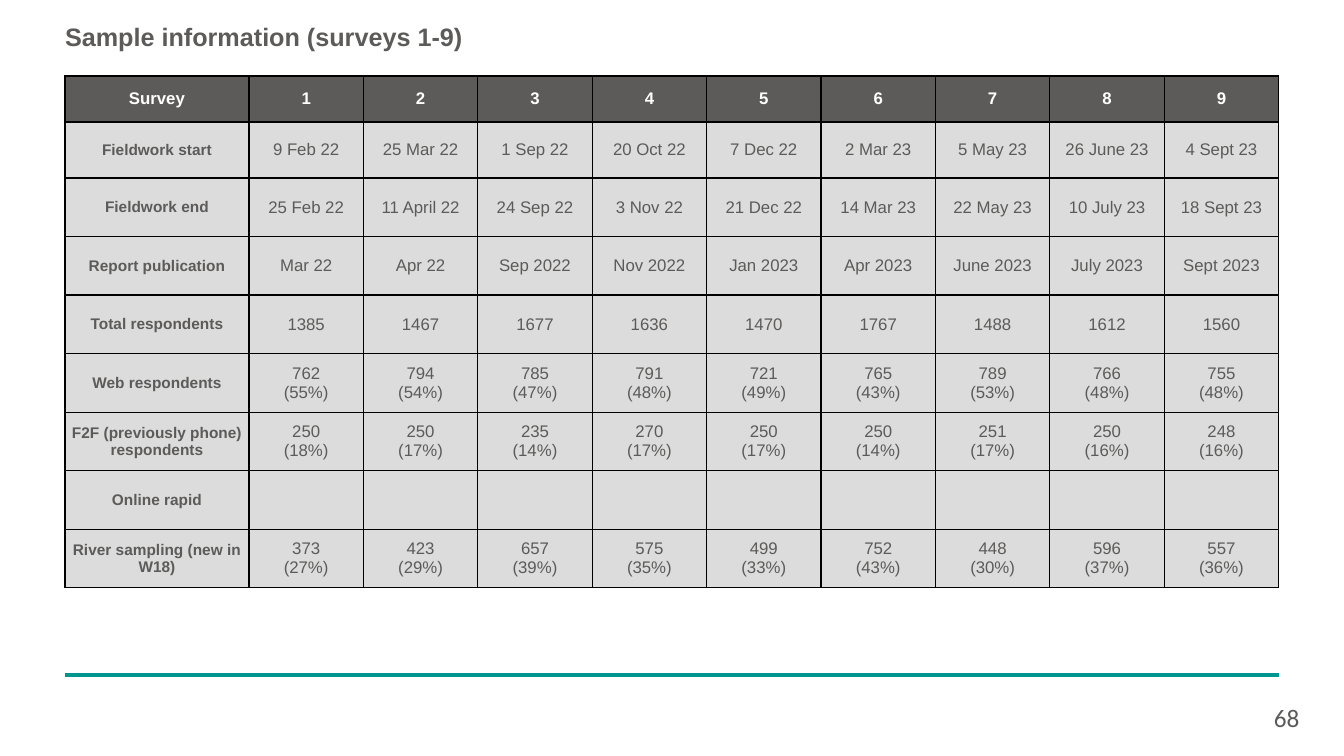
from lxml import etree
from pptx import Presentation, util as u
from pptx.dml.color import RGBColor
from pptx.enum import shapes, text
from pptx.oxml.ns import qn

SCALE = 914400 / 100.8
GREY, WHITE, BLACK, TEAL = "5C5B5A", "FFFFFF", "000000", "009690"
TITLE = dict(name="Arial", size=u.Pt(18), bold=True)
HEADER = dict(name="Arial", size=u.Pt(12), bold=True)
LABEL = dict(name="Arial", size=u.Pt(11), bold=True)
VALUE = dict(name="Arial", size=u.Pt(12), bold=False)
PAGE = dict(name="Calibri", size=u.Pt(18), bold=False)

ROWS = [
    ["Survey"] + [str(n) for n in range(1, 10)],
    ["Fieldwork start", "9 Feb 22", "25 Mar 22", "1 Sep 22", "20 Oct 22", "7 Dec 22",
     "2 Mar 23", "5 May 23", "26 June 23", "4 Sept 23"],
    ["Fieldwork end", "25 Feb 22", "11 April 22", "24 Sep 22", "3 Nov 22", "21 Dec 22",
     "14 Mar 23", "22 May 23", "10 July 23", "18 Sept 23"],
    ["Report publication", "Mar 22", "Apr 22", "Sep 2022", "Nov 2022", "Jan 2023",
     "Apr 2023", "June 2023", "July 2023", "Sept 2023"],
    ["Total respondents", "1385", "1467", "1677", "1636", "1470", "1767", "1488", "1612", "1560"],
    ["Web respondents", "762\n(55%)", "794\n(54%)", "785\n(47%)", "791\n(48%)", "721\n(49%)",
     "765\n(43%)", "789\n(53%)", "766\n(48%)", "755\n(48%)"],
    ["F2F (previously phone) respondents", "250\n(18%)", "250\n(17%)", "235\n(14%)", "270\n(17%)",
     "250\n(17%)", "250\n(14%)", "251\n(17%)", "250\n(16%)", "248\n(16%)"],
    ["Online rapid"] + [""] * 9,
    ["River sampling (new in W18)", "373\n(27%)", "423\n(29%)", "657\n(39%)", "575\n(35%)",
     "499\n(33%)", "752\n(43%)", "448\n(30%)", "596\n(37%)", "557\n(36%)"],
]


def px(n):
    return u.Emu(round(n * SCALE))


def color(hex_string):
    return RGBColor.from_string(hex_string)


def set_attrs(obj, values):
    for name, value in values.items():
        setattr(obj, name, value)


def write(tf, content, font, fill, align):
    for i, line in enumerate(content.split("\n")):
        p = tf.paragraphs[0] if i == 0 else tf.add_paragraph()
        p.alignment = align
        if line:
            r = p.add_run()
            r.text = line
            set_attrs(r.font, font)
            r.font.color.rgb = color(fill)


def add_label(s, box, content, font, **frame):
    tf = s.shapes.add_textbox(*map(px, box)).text_frame
    set_attrs(tf, dict(word_wrap=True, **frame))
    write(tf, content, font, GREY, text.PP_ALIGN.LEFT)
    return tf


def add_title(s, box):
    tf = add_label(s, box, "Sample information (surveys 1-9)", TITLE,
                   margin_left=0, margin_top=0, margin_right=0, margin_bottom=0)
    tf.paragraphs[0].line_spacing = 0.9


def add_borders(cell):
    # Borders must come before the fill in the cell properties
    tcPr = cell._tc.get_or_add_tcPr()
    for i, side in enumerate(("lnL", "lnR", "lnT", "lnB")):
        ln = etree.Element(qn("a:" + side), w=str(u.Pt(1)))
        solid = etree.SubElement(ln, qn("a:solidFill"))
        etree.SubElement(solid, qn("a:srgbClr"), val=BLACK)
        tcPr.insert(i, ln)


def format_cell(cell, content, is_header, is_label):
    font = HEADER if is_header else LABEL if is_label else VALUE
    set_attrs(cell, dict(margin_left=px(4), margin_right=px(4), margin_top=px(1),
                         margin_bottom=px(1), vertical_anchor=text.MSO_ANCHOR.MIDDLE))
    write(cell.text_frame, content, font, WHITE if is_header else GREY, text.PP_ALIGN.CENTER)
    cell.fill.solid()
    cell.fill.fore_color.rgb = color(GREY)
    if not is_header:
        clr = cell._tc.tcPr.find(".//" + qn("a:srgbClr"))
        etree.SubElement(clr, qn("a:alpha"), val="21000")
    add_borders(cell)


def add_sample_table(s, box, label_w=184, header_h=46, first_h=56):
    w, h = box[2:]
    table = s.shapes.add_table(len(ROWS), len(ROWS[0]), *map(px, box)).table
    set_attrs(table, dict(first_row=False, horz_banding=False))
    survey_w = (w - label_w) / (len(ROWS[0]) - 1)
    row_h = (h - header_h - first_h) / (len(ROWS) - 2)
    for i, column in enumerate(table.columns):
        column.width = px(survey_w if i else label_w)
    for i, row in enumerate(table.rows):
        row.height = px((header_h, first_h)[i] if i < 2 else row_h)
        for j, content in enumerate(ROWS[i]):
            format_cell(table.cell(i, j), content, i == 0, j == 0)


def add_footer(s, box):
    x, y, w, h = box
    # Rule across the content width
    rule = s.shapes.add_connector(shapes.MSO_CONNECTOR.STRAIGHT, px(x), px(y), px(x + w), px(y))
    rule.line.color.rgb = color(TEAL)
    rule.line.width = u.Pt(3)
    etree.SubElement(rule._element.spPr, qn("a:effectLst"))
    # Page number
    add_label(s, (x + w - 15, y + h - 40, 62, 40), "68", PAGE)


def main():
    prs = Presentation()
    set_attrs(prs, dict(slide_width=px(1344), slide_height=px(756)))
    s = prs.slides.add_slide(prs.slide_layouts[6])
    add_title(s, (65, 25, 1214, 48))
    add_sample_table(s, (65, 76, 1214, 512))
    add_footer(s, (65, 675, 1214, 62))
    prs.save("out.pptx")


if __name__ == "__main__":
    main()
